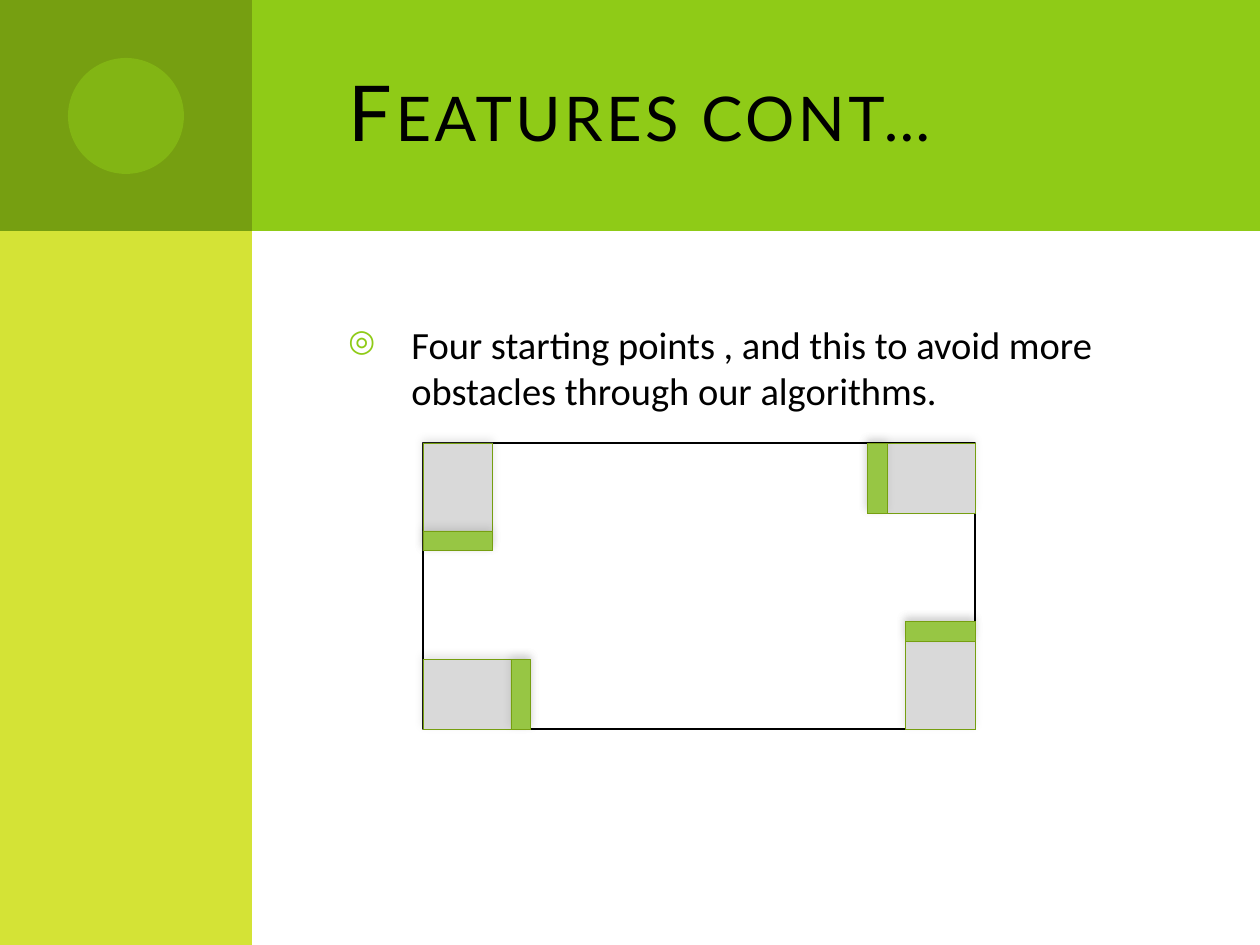
import pptx
import pptx.util
import pptx.dml.color
import pptx.enum.shapes
import pptx.enum.text
import pptx.oxml
import pptx.oxml.ns

THEME = {
    "green": "8FCB17", "dark": "769F11", "lime": "D4E336",
    "bay": "D9D9D9", "bar": "97C644", "white": "FFFFFF", "black": "000000",
    "title_pt": 44, "body_pt": 22, "title_font": "Lato", "body_font": "Calibri",
}
PX = 914400 / 126  # EMU per px
SHAPES = pptx.enum.shapes.MSO_SHAPE
NS = pptx.oxml.ns.nsdecls("a")


def add_box(shapes, kind, left, top, width, height, fill, line=None, line_pt=0.5):
    sp = shapes.add_shape(kind, *[round(v * PX) for v in (left, top, width, height)])
    sp.shadow.inherit = False
    sp.fill.solid()
    sp.fill.fore_color.rgb = pptx.dml.color.RGBColor.from_string(THEME[fill])
    if line:
        sp.line.color.rgb = pptx.dml.color.RGBColor.from_string(THEME[line])
        sp.line.width = pptx.util.Pt(line_pt)
    else:
        sp.line.fill.background()
    return sp


def set_text(sp, text, *, font, size, color="black", anchor="TOP"):
    tf = sp.text_frame
    tf.word_wrap = True
    tf.auto_size = pptx.enum.text.MSO_AUTO_SIZE.NONE
    tf.vertical_anchor = getattr(pptx.enum.text.MSO_ANCHOR, anchor)
    p = tf.paragraphs[0]
    p.alignment = pptx.enum.text.PP_ALIGN.LEFT
    r = p.add_run()
    r.text = text
    r.font.name = THEME[font]
    r.font.size = pptx.util.Pt(THEME[size])
    r.font.color.rgb = pptx.dml.color.RGBColor.from_string(THEME[color])
    return p


prs = pptx.Presentation()
prs.slide_width, prs.slide_height = round(1260 * PX), round(945 * PX)
s = prs.slides.add_slide(prs.slide_layouts[5])

# Header band, side band and corner with a translucent disc
add_box(s.shapes, SHAPES.RECTANGLE, 63, 0, 1197, 231, "green")
add_box(s.shapes, SHAPES.RECTANGLE, 0, 0, 252, 945, "lime")
add_box(s.shapes, SHAPES.RECTANGLE, 0, 0, 252, 231, "dark")
disc = add_box(s.shapes, SHAPES.OVAL, 68, 58, 116, 116, "green")
disc_color = disc.fill._xPr.find(".//" + pptx.oxml.ns.qn("a:srgbClr"))
disc_color.append(pptx.oxml.parse_xml(f'<a:alpha {NS} val="50000"/>'))

# Title, moved in front of the bands
title = s.shapes.title
title.left, title.top, title.width, title.height = [round(v * PX) for v in (336, 32, 861, 158)]
s.shapes._spTree.append(title._element)
p = set_text(title, "Features cont…", font="title_font", size="title_pt", anchor="MIDDLE")
rPr = p.runs[0].font._element
rPr.set("cap", "small")
rPr.set("spc", "200")

# Bulleted statement
body = s.shapes.add_textbox(*[round(v * PX) for v in (336, 315, 861, 529)])
p = set_text(body, "Four starting points , and this to avoid more obstacles through our algorithms.",
             font="body_font", size="body_pt")
p.space_before = pptx.util.Pt(18)
pPr = p._p.get_or_add_pPr()
pPr.set("marL", "457200")
pPr.set("indent", "-457200")
for bullet in (f'<a:buClr {NS}><a:srgbClr val="{THEME["green"]}"/></a:buClr>',
               f'<a:buSzPct {NS} val="80000"/>',
               f'<a:buChar {NS} char="◎"/>'):
    pPr.append(pptx.oxml.parse_xml(bullet))

# Playing field
LEFT, TOP, WIDTH, HEIGHT = 423, 443, 552, 286
add_box(s.shapes, SHAPES.RECTANGLE, LEFT, TOP, WIDTH, HEIGHT, "white", "black", 1.29)

# Starting bays: x and y side of the corner, rotation, bar at bottom (1) or top (-1)
BAY_W, BAY_H, BAR_H = 70, 108, 20
for x_side, y_side, rotation, bar_end in [(0, 0, 0, 1), (1, 1, 0, -1),
                                          (1, 0, 270, -1), (0, 1, 270, 1)]:
    seen_w, seen_h = (BAY_H, BAY_W) if rotation else (BAY_W, BAY_H)
    cx = LEFT + x_side * (WIDTH - seen_w) + seen_w // 2
    cy = TOP + y_side * (HEIGHT - seen_h) + seen_h // 2
    shift = bar_end * (BAY_H - BAR_H) // 2
    bar_cx, bar_cy = (cx + shift, cy) if rotation else (cx, cy + shift)
    for x, y, height, fill in [(cx, cy, BAY_H, "bay"), (bar_cx, bar_cy, BAR_H, "bar")]:
        sp = add_box(s.shapes, SHAPES.RECTANGLE, x - BAY_W // 2, y - height // 2,
                     BAY_W, height, fill, "dark")
        sp.rotation = rotation
        effects = sp._element.spPr.find(pptx.oxml.ns.qn("a:effectLst"))
        effects.append(pptx.oxml.parse_xml(
            f'<a:outerShdw {NS} blurRad="63500" dist="25400" dir="16020000" rotWithShape="0">'
            f'<a:srgbClr val="{THEME["black"]}"><a:alpha val="10000"/></a:srgbClr></a:outerShdw>'))

prs.save("out.pptx")
